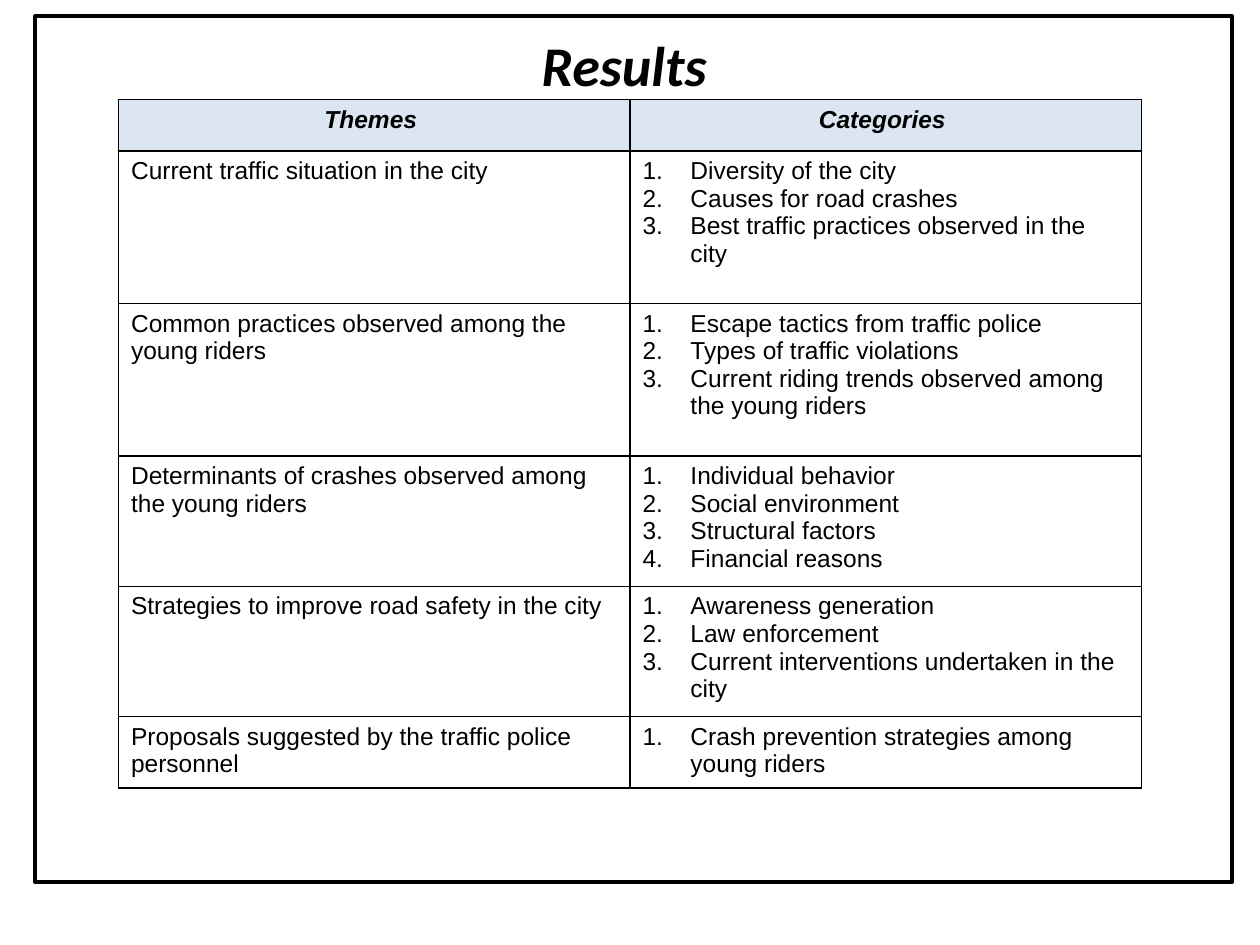
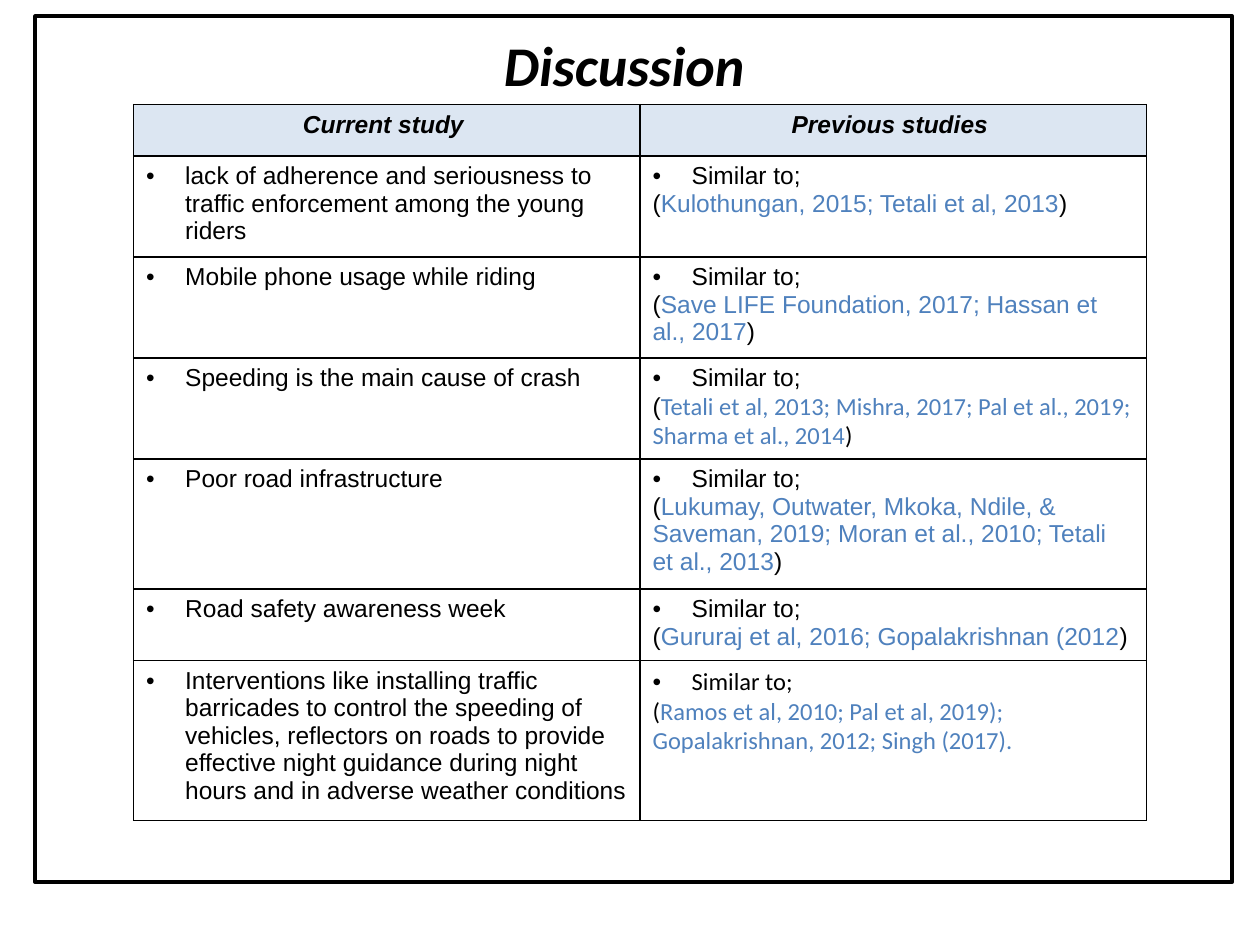
from pptx import Presentation
from pptx.dml.color import RGBColor
from pptx.enum.shapes import MSO_SHAPE as Shape
from pptx.enum.text import MSO_ANCHOR as Anchor, PP_ALIGN as Align
from pptx.oxml.ns import qn
from pptx.util import Inches, Pt
from lxml.etree import SubElement

BLACK = RGBColor(0x00, 0x00, 0x00)
HEADER_BLUE = RGBColor(0xDC, 0xE6, 0xF2)
CITATION_BLUE = RGBColor(0x4F, 0x81, 0xBD)

TITLE_FORMAT = {"name": "Calibri", "size": Pt(32), "bold": True, "italic": True}
HEADER_FORMAT = {"name": "Arial", "size": Pt(14), "bold": True, "italic": True}
BODY_FORMAT = {"name": "Arial", "size": Pt(14), "bold": False, "italic": False}

# List marker: element, its attributes, indent
NUMBER = ("a:buAutoNum", {"type": "arabicPeriod"}, 0.38)
BULLET = ("a:buChar", {"char": "•"}, 0.31)


def add_spans(para, spans, text_format, marker=None):
    """Write (text, colour, font) spans, with an optional list marker."""
    if marker:
        tag, attributes, indent = marker
        properties = para._p.get_or_add_pPr()
        properties.set("marL", str(Inches(indent)))
        properties.set("indent", str(-Inches(indent)))
        SubElement(properties, qn("a:buFont"), typeface="Arial")
        SubElement(properties, qn(tag), **attributes)
    for text, colour, font_name in spans:
        span = para.add_run()
        span.text = text
        for name, value in (text_format | {"name": font_name}).items():
            setattr(span.font, name, value)
        span.font.color.rgb = colour


def write_cell(cell, paragraphs, text_format, align=Align.LEFT, fill=None):
    """Fill a bordered table cell with (spans, marker) paragraphs."""
    properties = cell._tc.get_or_add_tcPr()
    for side in ("a:lnL", "a:lnR", "a:lnT", "a:lnB"):
        line = SubElement(properties, qn(side), w=str(Pt(1)))
        SubElement(SubElement(line, qn("a:solidFill")), qn("a:srgbClr"), val=str(BLACK))
    if fill:
        cell.fill.solid()
        cell.fill.fore_color.rgb = fill
    else:
        cell.fill.background()
    frame = cell.text_frame
    for index, (spans, marker) in enumerate(paragraphs):
        para = frame.add_paragraph() if index else frame.paragraphs[0]
        para.alignment = align
        add_spans(para, spans, text_format, marker)


# Results: theme, categories
themes = [
    ("Current traffic situation in the city",
     ["Diversity of the city", "Causes for road crashes",
      "Best traffic practices observed in the city"]),
    ("Common practices observed among the young riders",
     ["Escape tactics from traffic police", "Types of traffic violations",
      "Current riding trends observed among the young riders"]),
    ("Determinants of crashes observed among the young riders",
     ["Individual behavior", "Social environment", "Structural factors",
      "Financial reasons"]),
    ("Strategies to improve road safety in the city",
     ["Awareness generation", "Law enforcement",
      "Current interventions undertaken in the city"]),
    ("Proposals suggested by the traffic police personnel",
     ["Crash prevention strategies among young riders"]),
]
result_rows = [
    ([([(theme, BLACK, "Arial")], None)],
     [([(category, BLACK, "Arial")], NUMBER) for category in categories])
    for theme, categories in themes
]

# Discussion: finding, citations, closing bracket, fonts of lead-in and citations
findings = [
    ("lack of adherence and seriousness to traffic enforcement among the young riders",
     "Kulothungan, 2015; Tetali et al, 2013", ")", "Arial", "Arial"),
    ("Mobile phone usage while riding",
     "Save LIFE Foundation, 2017; Hassan et al., 2017", ")", "Arial", "Arial"),
    ("Speeding is the main cause of crash",
     "Tetali et al, 2013; Mishra, 2017; Pal et al., 2019; Sharma et al., 2014",
     ")", "Arial", "Calibri"),
    ("Poor road infrastructure",
     "Lukumay, Outwater, Mkoka, Ndile, & Saveman, 2019; Moran et al., 2010; "
     "Tetali et al., 2013", ")", "Arial", "Arial"),
    ("Road safety awareness week",
     "Gururaj et al, 2016; Gopalakrishnan (2012", ")", "Arial", "Arial"),
    ("Interventions like installing traffic barricades to control the speeding of "
     "vehicles, reflectors on roads to provide effective night guidance during night "
     "hours and in adverse weather conditions",
     "Ramos et al, 2010; Pal et al, 2019); Gopalakrishnan, 2012; Singh (2017).",
     "", "Calibri", "Calibri"),
]
discussion_rows = []
for finding, citations, closing, lead_font, citation_font in findings:
    sources = [("(", BLACK, lead_font), (citations, CITATION_BLUE, citation_font)]
    if closing:
        sources.append((closing, BLACK, citation_font))
    discussion_rows.append((
        [([(finding, BLACK, "Arial")], BULLET)],
        [([("Similar to;", BLACK, lead_font)], BULLET), (sources, None)],
    ))

# Title, column heads, body rows, table left, top and width, row heights
pages = [
    ("Results ", ("Themes ", "Categories "), result_rows,
     (0.94, 0.79, 8.12), (0.41, 1.21, 1.21, 0.97, 0.97, 0.54)),
    ("Discussion ", ("Current study ", "Previous studies "), discussion_rows,
     (1.06, 0.83, 8.04), (0.41, 0.76, 0.76, 0.79, 0.98, 0.54, 1.19)),
]

deck = Presentation()
deck.slide_width, deck.slide_height = Inches(10), Inches(7.5)

for title, heads, rows, (left, top, width), heights in pages:
    page = deck.slides.add_slide(deck.slide_layouts[6])

    # Page border
    border = page.shapes.add_shape(
        Shape.RECTANGLE, Inches(0.28), Inches(0.13), Inches(9.5), Inches(6.87))
    border.shadow.inherit = False
    border.fill.background()
    border.line.color.rgb = BLACK
    border.line.width = Pt(2.25)

    # Title
    box = page.shapes.add_textbox(Inches(0.28), Inches(0.21), Inches(9.45), Inches(0.6))
    box.text_frame.word_wrap = True
    box.text_frame.vertical_anchor = Anchor.MIDDLE
    para = box.text_frame.paragraphs[0]
    para.alignment = Align.CENTER
    add_spans(para, [(title, BLACK, "Calibri")], TITLE_FORMAT)

    # Table
    table = page.shapes.add_table(
        len(heights), 2, Inches(left), Inches(top), Inches(width),
        Inches(sum(heights))).table
    table.first_row = table.horz_banding = False
    for row, height in zip(table.rows, heights):
        row.height = Inches(height)
    for column, head in enumerate(heads):
        write_cell(table.cell(0, column), [([(head, BLACK, "Arial")], None)],
                   HEADER_FORMAT, Align.CENTER, HEADER_BLUE)
    for index, row in enumerate(rows, start=1):
        for column, paragraphs in enumerate(row):
            write_cell(table.cell(index, column), paragraphs, BODY_FORMAT)

deck.save("out.pptx")
